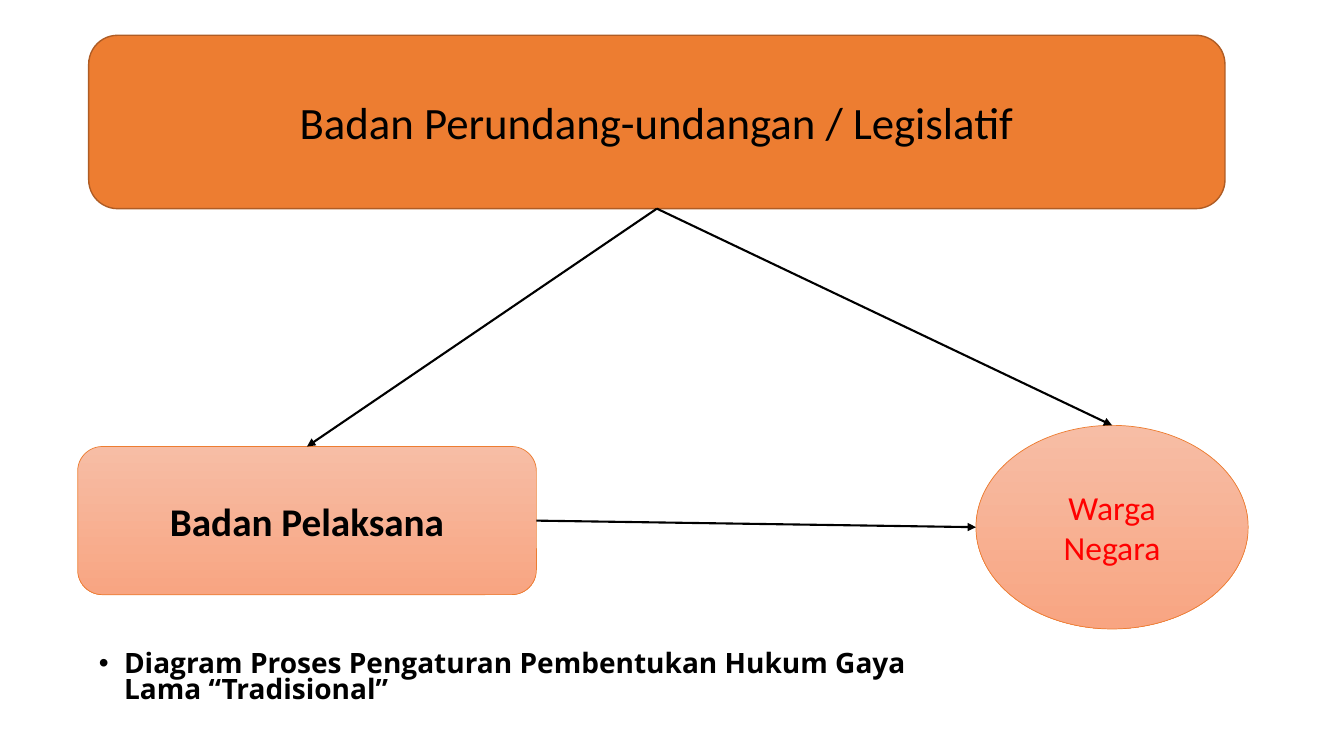
import pptx
import pptx.util
import pptx.dml.color
import pptx.enum.shapes
import pptx.enum.text
import pptx.oxml
import pptx.oxml.ns
from pptx.util import Inches

COLORS = {
    "black": "000000",
    "red": "FF0000",
    "orange": "ED7D31",
    "brown": "AF5C24",
    "light": "F7BDA5",
    "salmon": "F8A582",
}
SHAPES = pptx.enum.shapes.MSO_SHAPE


def rgb(name):
    return pptx.dml.color.RGBColor.from_string(COLORS[name])


def set_font(para, face, size, color, bold=False):
    font = para.font
    font.name = face
    font.size = pptx.util.Pt(size)
    font.bold = bold
    font.color.rgb = rgb(color)


def add_node(slide, kind, box, text, fills, edge, size, color="black", bold=False):
    """Add a labelled shape; two fill names make a top-to-bottom gradient."""
    node = slide.shapes.add_shape(kind, *map(Inches, box))
    node.shadow.inherit = False
    if len(fills) == 1:
        node.fill.solid()
        node.fill.fore_color.rgb = rgb(fills[0])
    else:
        node.fill.gradient()
        node.fill.gradient_angle = 270
        for stop, name in zip(node.fill.gradient_stops, fills):
            stop.color.rgb = rgb(name)
    name, width = edge
    node.line.color.rgb = rgb(name)
    node.line.width = pptx.util.Pt(width)
    frame = node.text_frame
    frame.word_wrap = True
    frame.vertical_anchor = pptx.enum.text.MSO_ANCHOR.MIDDLE
    para = frame.paragraphs[0]
    para.text = text
    para.alignment = pptx.enum.text.PP_ALIGN.CENTER
    set_font(para, "Calibri", size, color, bold)
    return node


def side(node, name):
    """Return the middle point of one side of a node."""
    across, down = {"top": (0.5, 0), "bottom": (0.5, 1),
                    "left": (0, 0.5), "right": (1, 0.5)}[name]
    return (int(node.left + across * node.width),
            int(node.top + down * node.height))


def add_arrow(slide, start, end):
    kind = pptx.enum.shapes.MSO_CONNECTOR.STRAIGHT
    arrow = slide.shapes.add_connector(kind, *start, *end)
    arrow.line.color.rgb = rgb("black")
    arrow.line.width = pptx.util.Pt(1.5)
    line = arrow.line._get_or_add_ln()
    pptx.oxml.ns.qn("a:tailEnd")
    line.append(pptx.oxml.parse_xml(
        f'<a:tailEnd {pptx.oxml.ns.nsdecls("a")} type="triangle"/>'))
    arrow._element.spPr.append(pptx.oxml.parse_xml(
        f'<a:effectLst {pptx.oxml.ns.nsdecls("a")}/>'))


def fill_body(body, box, text):
    """Place the body placeholder and write its one bullet."""
    body.left, body.top, body.width, body.height = map(Inches, box)
    frame = body.text_frame
    frame.word_wrap = True
    frame.auto_size = pptx.enum.text.MSO_AUTO_SIZE.NONE
    para = frame.paragraphs[0]
    para.text = text
    para.line_spacing = pptx.util.Pt(18.7)
    para.space_before = pptx.util.Pt(10)
    set_font(para, "Open Sans", 20, "black", bold=True)
    props = para._p.get_or_add_pPr()
    props.set("marL", str(Inches(0.25)))
    props.set("indent", str(Inches(-0.25)))


def main():
    deck = pptx.Presentation()
    deck.slide_width, deck.slide_height = Inches(13.33), Inches(7.5)
    slide = deck.slides.add_slide(deck.slide_layouts[1])
    title = slide.shapes.title._element
    title.getparent().remove(title)

    soft = ("light", "salmon")
    thin = ("orange", 0.5)
    law = add_node(slide, SHAPES.ROUNDED_RECTANGLE, (0.88, 0.35, 11.27, 1.72),
                   "Badan Perundang-undangan / Legislatif",
                   ("orange",), ("brown", 1), 32)
    agent = add_node(slide, SHAPES.ROUNDED_RECTANGLE, (0.77, 4.43, 4.55, 1.47),
                     "Badan Pelaksana", soft, thin, 28, bold=True)
    people = add_node(slide, SHAPES.OVAL, (9.68, 4.22, 2.7, 2.02),
                      "Warga Negara", soft, thin, 24, "red")

    add_arrow(slide, side(law, "bottom"), side(agent, "top"))
    add_arrow(slide, side(law, "bottom"), side(people, "top"))
    add_arrow(slide, side(agent, "right"), side(people, "left"))

    fill_body(slide.placeholders[1], (0.88, 6.43, 8.51, 0.4),
              "Diagram Proses Pengaturan Pembentukan Hukum Gaya Lama “Tradisional”")
    deck.save("out.pptx")


if __name__ == "__main__":
    main()
